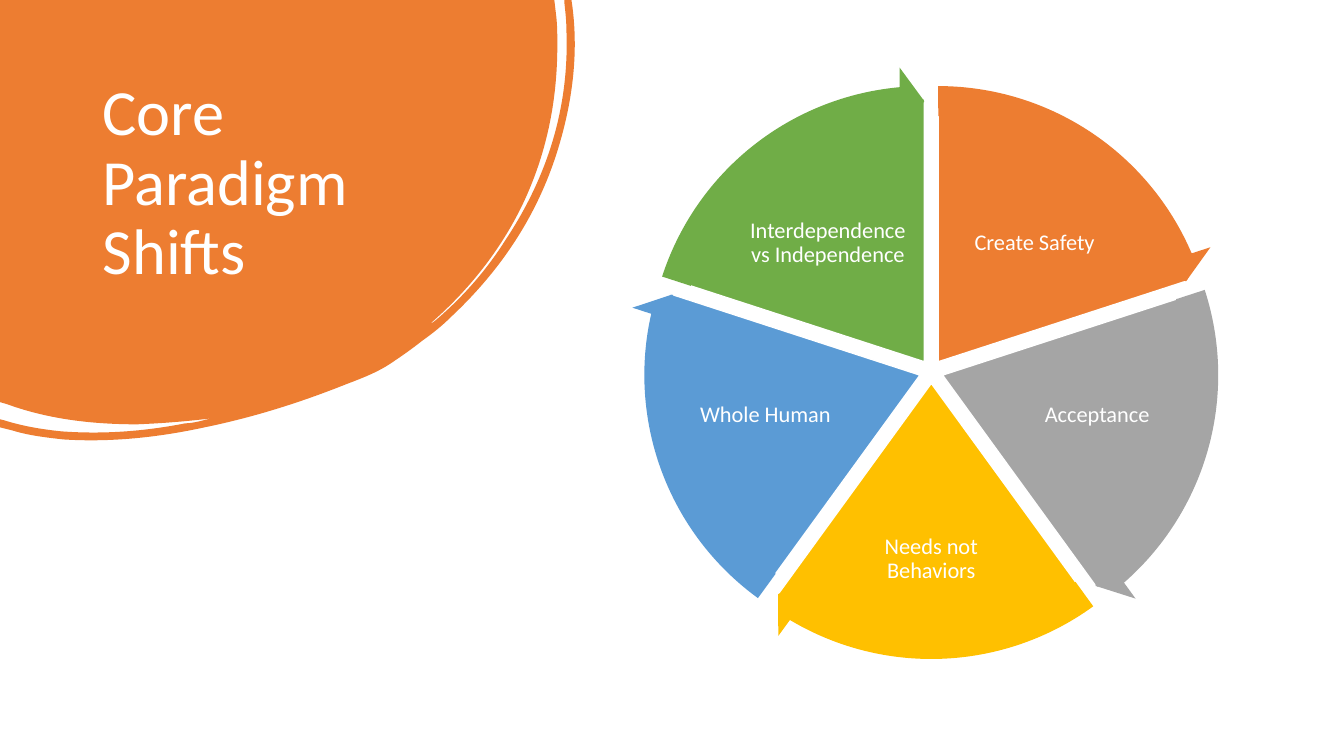
"""Build the Core Paradigm Shifts slide: a title blob and a five-part cycle."""
import math

from pptx import Presentation, util as u
from pptx.dml.color import RGBColor
from pptx.enum import shapes, text
from pptx.oxml import ns

WHITE = RGBColor(0xFF, 0xFF, 0xFF)
ORANGE = RGBColor(0xED, 0x7D, 0x31)
GRAY = RGBColor(0xA5, 0xA5, 0xA5)
GOLD = RGBColor(0xFF, 0xC0, 0x00)
BLUE = RGBColor(0x5B, 0x9B, 0xD5)
GREEN = RGBColor(0x70, 0xAD, 0x47)

FULL_TURN = 216
SLICE_TURN = FULL_TURN / 5
TOP = 162
ARROW_TURN = 39.93
HUB_X, HUB_Y, HUB_GAP = 23.47, 9.36, 0.3
PIE_SIZE, ARROW_SIZE = 13.26, 14.89

BLOB_UNIT = u.Cm(0.0254)
BLOB_WIDTH, BLOB_HEIGHT = 571 * BLOB_UNIT, 437 * BLOB_UNIT
BLOB_OUTLINE = [
    (550, 0), (552, 17),
    (553, 26, 553, 36, 553, 45), (553, 101, 542, 154, 518, 204),
    (496, 249, 465, 288, 427, 321), (429, 321, 430, 319, 432, 318),
    (459, 295, 482, 269, 501, 239), (543, 176, 565, 107, 562, 30),
    (562, 21, 561, 12, 560, 3),
    (560, 0), (567, 0), (568, 7),
    (574, 54, 568, 102, 553, 150), (533, 214, 497, 268, 448, 314),
    (439, 323, 429, 331, 419, 338), (409, 346, 399, 353, 387, 361),
    (375, 369, 360, 375, 344, 381), (299, 399, 252, 414, 203, 424),
    (157, 434, 110, 439, 63, 436), (45, 434, 28, 432, 12, 427),
    (0, 424), (0, 416), (4, 417),
    (23, 423, 42, 426, 61, 428), (103, 431, 143, 428, 184, 420),
    (189, 420, 193, 419, 198, 418), (202, 417, 206, 416, 210, 415),
    (186, 418, 161, 420, 136, 421), (92, 421, 48, 416, 7, 401),
    (0, 399),
]

SHIFTS = [
    ("Create Safety", ORANGE, (23.94, 4.7, 4.27, 2.84)),
    ("Acceptance", GRAY, (25.68, 8.89, 3.94, 3.15)),
    ("Needs not Behaviors", GOLD, (21.58, 12.35, 3.78, 3.48)),
    ("Whole Human", BLUE, (17.32, 8.89, 3.94, 3.15)),
    ("Interdependence vs Independence", GREEN, (18.73, 4.71, 4.27, 2.84)),
]


def add_words(parent, words, box, size, align, inset_x, inset_y):
    frame = parent.add_textbox(*[u.Cm(length) for length in box]).text_frame
    frame.word_wrap = True
    frame.vertical_anchor = text.MSO_ANCHOR.MIDDLE
    frame.margin_left = frame.margin_right = u.Cm(inset_x)
    frame.margin_top = frame.margin_bottom = u.Cm(inset_y)
    frame.text = words
    paragraph = frame.paragraphs[0]
    paragraph.alignment = align
    paragraph.line_spacing = 0.9
    font = paragraph.runs[0].font
    font.name, font.size = "Calibri", u.Pt(size)
    font.color.rgb = WHITE


def add_sector(parent, preset, index, size, color, adjustments):
    middle = math.radians(270 + 72 * (index + 0.5))
    left = HUB_X + HUB_GAP * math.cos(middle) - size / 2
    top = HUB_Y + HUB_GAP * math.sin(middle) - size / 2
    sector = parent.add_shape(preset, u.Cm(left), u.Cm(top), u.Cm(size), u.Cm(size))
    for position, value in enumerate(adjustments):
        sector.adjustments[position] = value
    sector.shadow.inherit = False
    sector.fill.solid()
    sector.fill.fore_color.rgb = color
    sector.line.fill.background()
    return sector


deck = Presentation()
deck.slide_width, deck.slide_height = u.Cm(33.87), u.Cm(19.05)
slide = deck.slides.add_slide(deck.slide_layouts[6])

builder = slide.shapes.build_freeform(0, 0)
for segment in BLOB_OUTLINE:
    corners = zip(segment[::2], segment[1::2])
    builder.add_line_segments([(x * BLOB_UNIT, y * BLOB_UNIT) for x, y in corners],
                              close=False)
blob = builder.convert_to_shape()
blob.shadow.inherit = False
blob.fill.solid()
blob.fill.fore_color.rgb = ORANGE
blob.line.fill.background()
blob.width, blob.height = BLOB_WIDTH, BLOB_HEIGHT

outline = next(blob.element.iter(ns.qn("a:path")))
outline.set("w", str(BLOB_WIDTH))
outline.set("h", str(BLOB_HEIGHT))
steps = iter(outline.findall(ns.qn("a:lnTo")))
for segment in BLOB_OUTLINE:
    step = next(steps)
    if len(segment) == 6:
        step.tag = ns.qn("a:cubicBezTo")
        for follower in (next(steps), next(steps)):
            step.append(follower[0])
            outline.remove(follower)
outline.append(outline.makeelement(ns.qn("a:close")))

add_words(slide.shapes, "Core Paradigm Shifts", (2.34, 1.82, 8.94, 5.64), 46,
          text.PP_ALIGN.LEFT, 0.25, 0.13)

cycle = slide.shapes.add_group_shape().shapes
starts = [(TOP + SLICE_TURN * index) % FULL_TURN for index in range(len(SHIFTS))]

for index, (label, color, box) in enumerate(SHIFTS):
    end = (starts[index] + SLICE_TURN) % FULL_TURN
    wedge = add_sector(cycle, shapes.MSO_SHAPE.PIE, index, PIE_SIZE, color,
                       (starts[index], end))
    wedge.line.color.rgb = WHITE
    wedge.line.width = u.Pt(1)
    add_words(cycle, label, box, 16, text.PP_ALIGN.CENTER, 0.05, 0.05)

for index, (label, color, box) in enumerate(SHIFTS):
    tip = (starts[index] + ARROW_TURN) % FULL_TURN
    add_sector(cycle, shapes.MSO_SHAPE.CIRCULAR_ARROW, index, ARROW_SIZE, color,
               (0.051, 3.275, tip, starts[index], 0.059))

deck.save("out.pptx")
